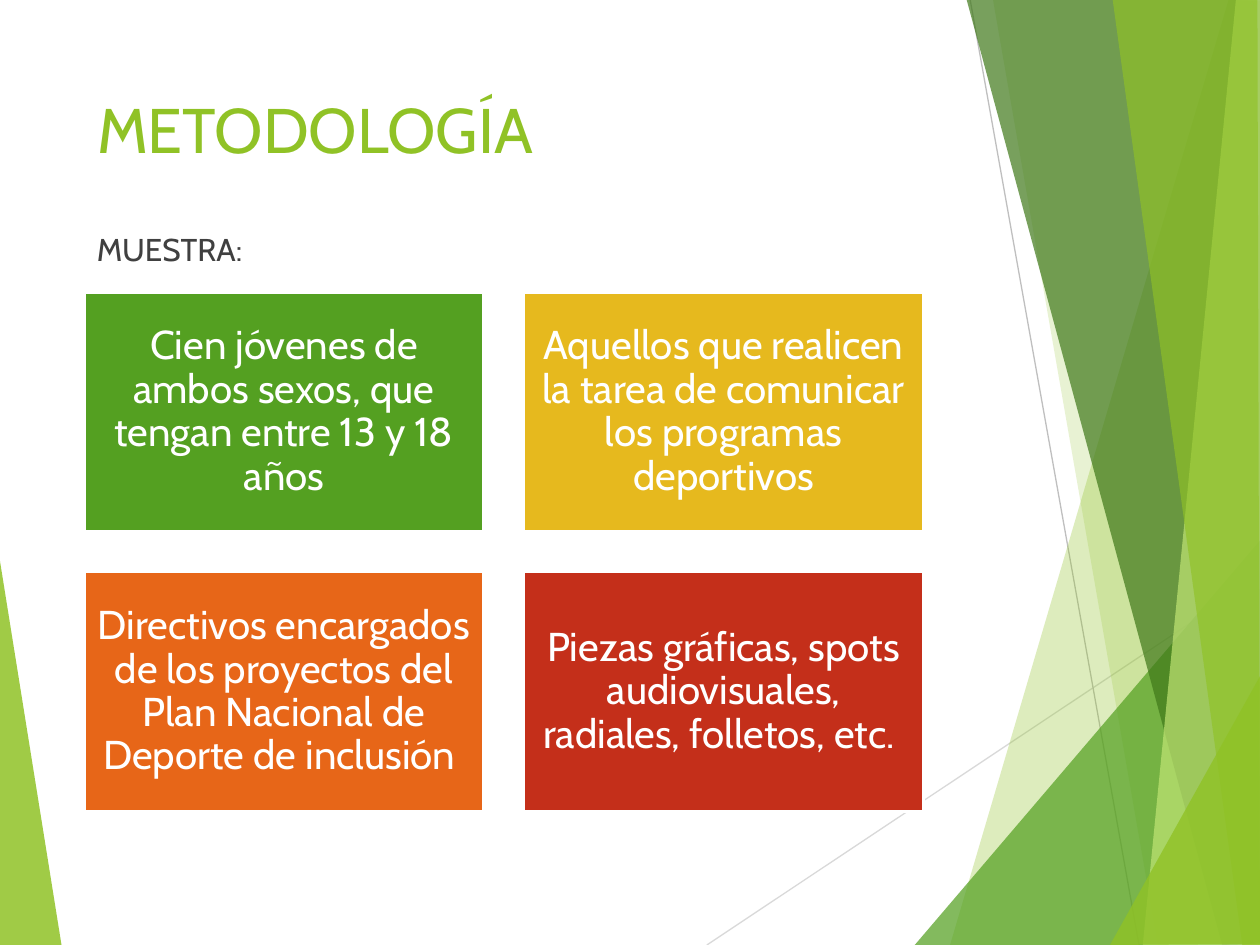
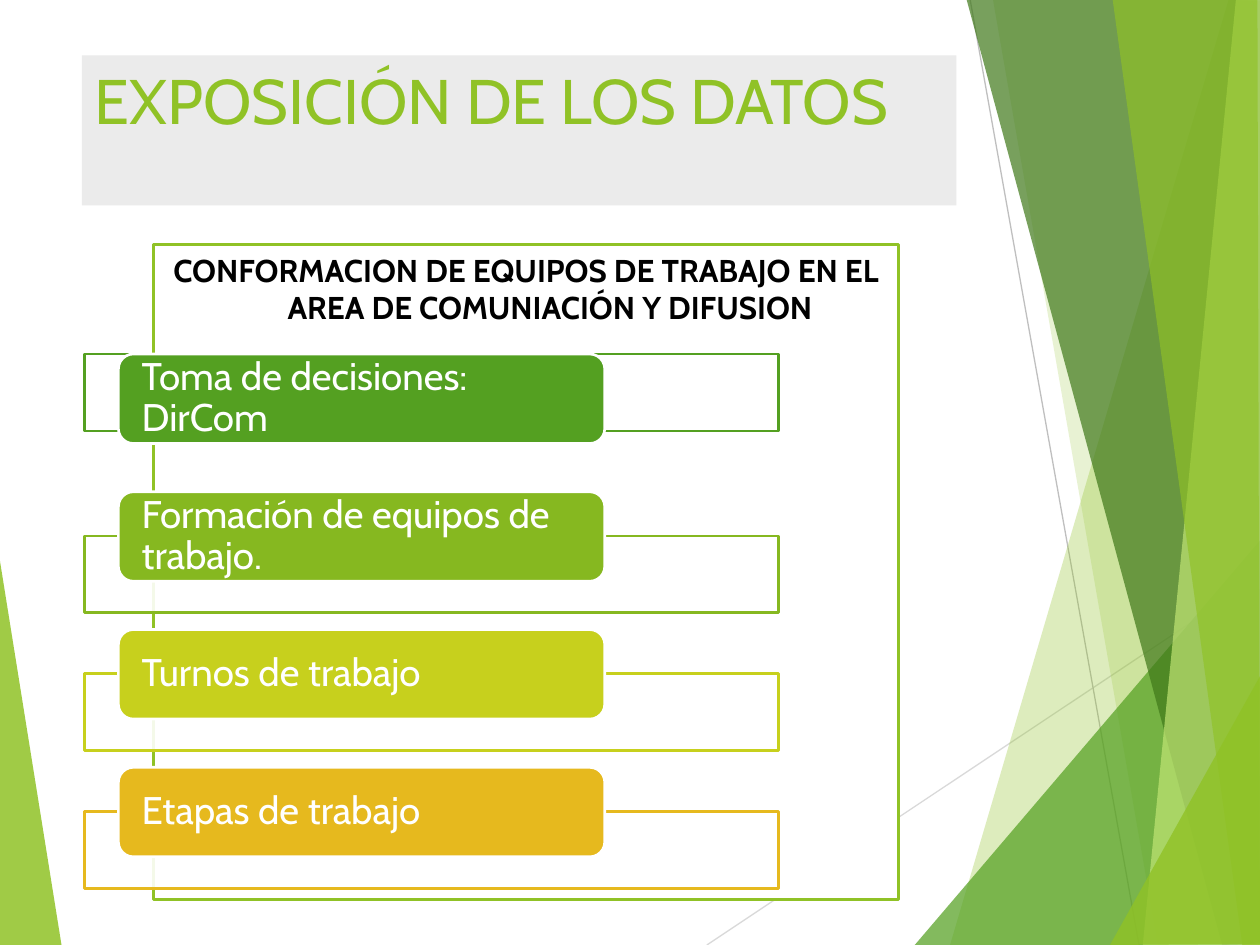
from pptx import Presentation
from pptx.dml.color import RGBColor
from pptx.enum.shapes import MSO_CONNECTOR as Connector, MSO_SHAPE as Shape
from pptx.enum.text import MSO_ANCHOR as Anchor, MSO_AUTO_SIZE as AutoSize, PP_ALIGN as Align
from pptx.oxml.ns import qn
from pptx.oxml.xmlchemy import OxmlElement
from pptx.util import Inches, Pt

FONT = "Cabin"
LIME, GREEN, GOLD, WHITE = "90C226", "54A021", "E6B91E", "FFFFFF"
TITLE_ONLY = 5

# Background: thin lines (start, end, colour) and facets (colour, opacity %, corners)
RAYS = [
    ((5.61, 7.5), (10.01, 4.57), "D9D9D9"),
    ((7.7, 0), (9.04, 7.5), "BFBFBF"),
]
FACETS = [
    (LIME, 85, [(-0.01, 4.39), (0.49, 7.51), (-0.01, 7.5)]),
    (LIME, 30, [(9.75, 0), (7.54, 7.5), (10.02, 7.51), (10.01, 0.01)]),
    (LIME, 20, [(7.88, -0.01), (9.19, 7.5), (10.01, 7.5), (10.01, -0.01)]),
    (GREEN, 72, [(7.26, 7.5), (10, 4.29), (10.01, 7.5)]),
    ("3F7819", 70, [(7.67, -0.01), (9.7, 7.5), (10.01, 7.49), (10.01, -0.01)]),
    ("C0E474", 70, [(9.81, -0.01), (9.07, 7.5), (10.01, 7.5), (10, -0.01)]),
    (LIME, 65, [(8.83, -0.01), (9.86, 7.5), (10, 7.5), (9.98, -0.01)]),
    (LIME, 80, [(8.81, 7.5), (10.01, 5.35), (10.01, 7.49)]),
]

SAMPLE = [
    ("Cien jóvenes de ambos sexos, que tengan entre 13 y 18 años", GREEN),
    ("Aquellos que realicen la tarea de comunicar los programas deportivos", GOLD),
    ("Directivos encargados de los proyectos del Plan Nacional de Deporte de inclusión ", "E76618"),
    ("Piezas gráficas, spots audiovisuales, radiales, folletos, etc. ", "C42F1A"),
]
TEAM_TOPICS = [
    ("Toma de decisiones: DirCom", GREEN),
    ("Formación de equipos de trabajo.", "86B820"),
    ("Turnos de trabajo", "C7D01D"),
    ("Etapas de trabajo", GOLD),
]


def rgb(color):
    return RGBColor.from_string(color)


class Builder:
    """Holds the deck's style and the current page."""

    def __init__(self):
        self.deck = Presentation()
        self.deck.slide_width, self.deck.slide_height = Inches(10), Inches(7.5)
        self.layout = self.deck.slide_layouts[TITLE_ONLY]
        self.page = None

    def new_page(self):
        self.page = self.deck.slides.add_slide(self.layout)

    def paint(self, shape, fill, line=None, opacity=100):
        shape.shadow.inherit = False
        shape.fill.solid()
        shape.fill.fore_color.rgb = rgb(fill)
        if opacity < 100:
            alpha = OxmlElement("a:alpha")
            alpha.set("val", str(opacity * 1000))
            shape.element.find(".//" + qn("a:srgbClr")).append(alpha)
        if line:
            shape.line.color.rgb = rgb(line)
            shape.line.width = Pt(1.5)
        else:
            shape.line.fill.background()

    def set_text(self, shape, text, size, color, align=Align.LEFT, anchor=Anchor.TOP,
                 margins=(0.1, 0.05), bold=False, spacing=None):
        frame = shape.text_frame
        frame.text = text
        frame.word_wrap = True
        frame.auto_size = AutoSize.NONE
        frame.vertical_anchor = anchor
        frame.margin_left = frame.margin_right = Inches(margins[0])
        frame.margin_top = frame.margin_bottom = Inches(margins[1])
        para = frame.paragraphs[0]
        para.alignment = align
        para.line_spacing = spacing
        para.font.name, para.font.size, para.font.bold = FONT, Pt(size), bold
        para.font.color.rgb = rgb(color)
        return para

    def hang(self, para, indent=0.38):
        para.space_before = Pt(10)
        properties = para._p.get_or_add_pPr()
        properties.set("marL", str(Inches(indent)))
        properties.set("indent", str(-Inches(indent)))

    def title(self, text, left, top, width, height, fill=None):
        box = self.page.shapes.title
        box.left, box.top, box.width, box.height = map(Inches, (left, top, width, height))
        if fill:
            self.paint(box, fill)
        self.set_text(box, text, 36, LIME)

    def text(self, text, left, top, width, height, size, color):
        box = self.page.shapes.add_textbox(*map(Inches, (left, top, width, height)))
        return self.set_text(box, text, size, color)

    def box(self, left, top, width, height, fill, line, kind=Shape.RECTANGLE, opacity=100):
        box = self.page.shapes.add_shape(kind, *map(Inches, (left, top, width, height)))
        self.paint(box, fill, line, opacity)
        return box

    def ray(self, start, end, color):
        ray = self.page.shapes.add_connector(Connector.STRAIGHT, *map(Inches, start + end))
        ray.line.color.rgb = rgb(color)
        ray.line.width = Pt(0.75)
        ray.element.spPr.append(OxmlElement("a:effectLst"))
        return ray

    def facet(self, color, opacity, corners):
        points = [(Inches(x), Inches(y)) for x, y in corners]
        outline = self.page.shapes.build_freeform(*points[0])
        outline.add_line_segments(points[1:], close=True)
        facet = outline.convert_to_shape()
        self.paint(facet, color, opacity=opacity)
        return facet

    def background(self):
        """Draws the shared background, then hands it to the layout."""
        parts = [self.ray(*ray) for ray in RAYS] + [self.facet(*facet) for facet in FACETS]
        for number, part in enumerate(parts, 100):
            part.element.find(".//" + qn("p:cNvPr")).set("id", str(number))
            self.layout.shapes.element.append(part.element)


def sample_page(builder):
    builder.title("METODOLOGÍA", 0.67, 0.67, 6.94, 1.44)
    builder.hang(builder.text("MUESTRA:", 0.67, 1.78, 6.94, 0.5, 18, "404040"))

    # Two by two grid of cards
    width, height, gap = 3.17, 1.9, 0.32
    for index, (text, color) in enumerate(SAMPLE):
        row, column = divmod(index, 2)
        card = builder.box(0.67 + column * (width + gap), 2.32 + row * (height + gap),
                           width, height, color, WHITE)
        builder.set_text(card, text, 23, WHITE, Align.CENTER, Anchor.MIDDLE, (0.1, 0.1), spacing=0.9)


def data_page(builder):
    builder.title("EXPOSICIÓN DE LOS DATOS", 0.65, 0.44, 6.94, 1.19, "EBEBEB")

    # Panel with its heading
    panel = builder.box(1.22, 1.94, 5.91, 5.2, WHITE, LIME)
    heading = "CONFORMACION DE EQUIPOS DE TRABAJO EN EL AREA DE COMUNIACIÓN Y DIFUSION"
    builder.hang(builder.set_text(panel, heading, 18, "000000", Align.CENTER, bold=True))

    # Each topic is a label over an outlined bar; the first bar starts level with its label
    pitch = 3.28 / 3
    for index, (text, color) in enumerate(TEAM_TOPICS):
        top = 2.81 + index * pitch
        drop = 0.35 if index else 0
        builder.box(0.67, top + drop, 5.51, 0.61, WHITE, color, opacity=90)
        label = builder.box(0.94, top, 3.86, 0.71, color, WHITE, Shape.ROUNDED_RECTANGLE)
        builder.set_text(label, text, 22, WHITE, anchor=Anchor.MIDDLE, margins=(0.15, 0), spacing=0.9)


def main():
    builder = Builder()
    builder.new_page()
    builder.background()
    sample_page(builder)
    builder.new_page()
    data_page(builder)
    builder.deck.save("out.pptx")


if __name__ == "__main__":
    main()
